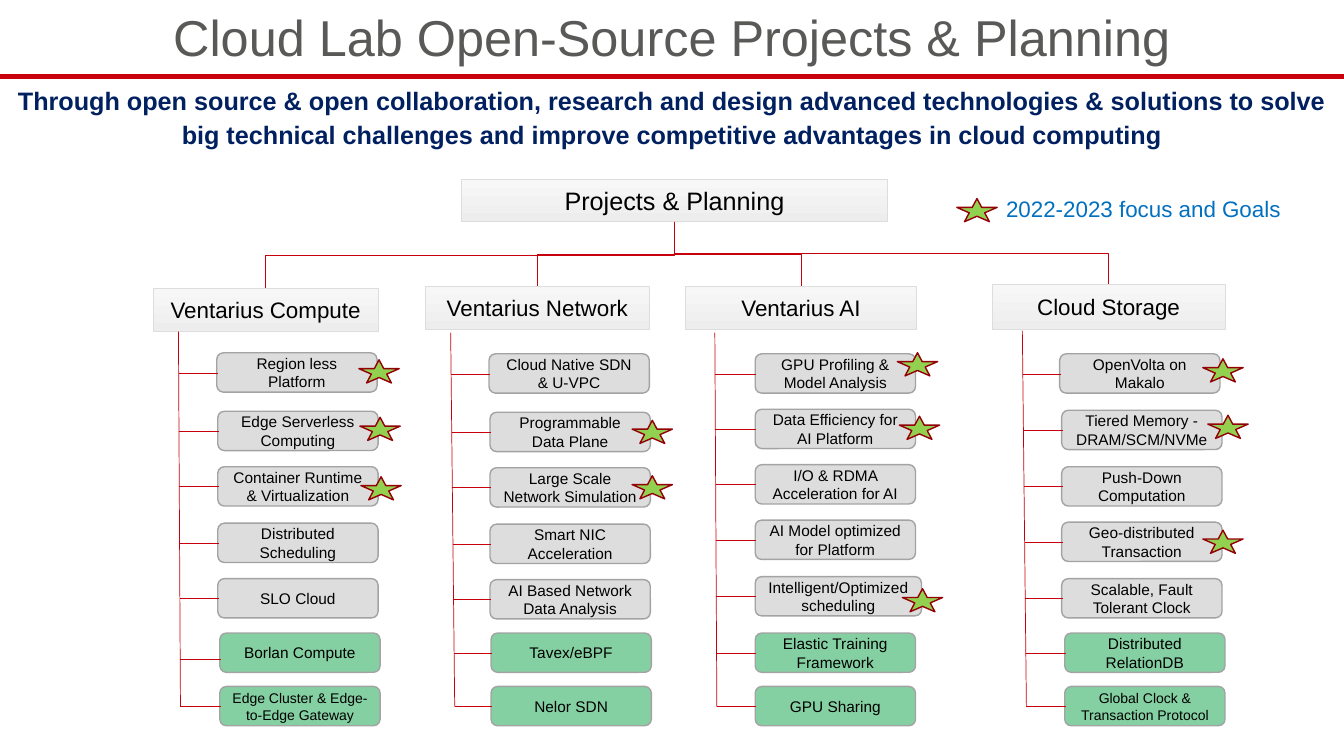
from dataclasses import dataclass

import pptx
import pptx.dml.color
import pptx.enum.dml
import pptx.enum.shapes
import pptx.enum.text
import pptx.oxml.ns
import pptx.util
from lxml import etree

Inches = pptx.util.Inches
Pt = pptx.util.Pt
SHAPE = pptx.enum.shapes.MSO_SHAPE
LINK = pptx.enum.shapes.MSO_CONNECTOR
ALIGN = pptx.enum.text.PP_ALIGN
ANCHOR = pptx.enum.text.MSO_ANCHOR

COLORS = {
    "title": "595957", "red": "C7000B", "navy": "002060", "blue": "0070C0",
    "black": "000000", "head_top": "F7F7F7", "head_bottom": "EDEDED",
    "gray": "DDDDDD", "box_line": "A3A3A3", "done": "84D0A2",
    "star": "92D050", "star_line": "930008",
}


@dataclass
class Item:
    text: str
    star: tuple = None
    size: float = 11
    width: float = 1.59
    rung: float = 0.2


@dataclass
class Column:
    name: str
    head: tuple      # left, top, width, height
    spine: tuple     # top x, top y, bottom x
    lefts: tuple     # first box, other planned boxes, finished boxes
    tops: tuple      # planned boxes
    items: list


class SlideBuilder:
    font = "Arial"

    def __init__(self, prs):
        self.slide = prs.slides.add_slide(prs.slide_layouts[1])
        self.shapes = self.slide.shapes

    def color(self, name):
        return pptx.dml.color.RGBColor.from_string(COLORS[name])

    def add_text(self, sp, text, size, color="black", bold=False,
                 align=ALIGN.CENTER, anchor=ANCHOR.MIDDLE, spacing=None, wrap=True):
        tf = sp.text_frame
        tf.auto_size = pptx.enum.text.MSO_AUTO_SIZE.NONE
        tf.word_wrap = wrap
        tf.vertical_anchor = anchor
        for i, line in enumerate(text.split("\n")):
            p = tf.paragraphs[0] if i == 0 else tf.add_paragraph()
            p.alignment = align
            p.space_before = Pt(0)
            if spacing:
                p.line_spacing = spacing
            r = p.add_run()
            r.text = line
            r.font.name = self.font
            r.font.size = Pt(size)
            r.font.bold = bold
            r.font.color.rgb = self.color(color)

    def placeholder(self, index, rect, text, size, color, spacing, bold=False):
        sp = self.slide.placeholders[index]
        sp.left, sp.top, sp.width, sp.height = map(Inches, rect)
        self.add_text(sp, text, size, color, bold, anchor=ANCHOR.BOTTOM, spacing=spacing)
        pPr = sp.text_frame.paragraphs[0]._p.get_or_add_pPr()
        pPr.set("marL", "0")
        pPr.set("indent", "0")
        etree.SubElement(pPr, pptx.oxml.ns.qn("a:buNone"))

    def shape(self, kind, rect, fill, line, weight):
        sp = self.shapes.add_shape(kind, *map(Inches, rect))
        sp.shadow.inherit = False
        if fill:
            sp.fill.solid()
            sp.fill.fore_color.rgb = self.color(fill)
        sp.line.color.rgb = self.color(line)
        sp.line.width = Pt(weight)
        return sp

    def heading(self, rect, text, size):
        sp = self.shape(SHAPE.RECTANGLE, rect, None, "gray", 0.5)
        sp.fill.gradient()
        sp.fill.gradient_angle = 270
        for stop, name in zip(sp.fill.gradient_stops, ("head_top", "head_bottom")):
            stop.color.rgb = self.color(name)
        self.add_text(sp, text, size)

    def box(self, rect, text, size, fill):
        sp = self.shape(SHAPE.ROUNDED_RECTANGLE, rect, fill, "box_line", 1)
        self.add_text(sp, text, size)

    def star(self, left, top):
        self.shape(SHAPE.STAR_5_POINT, (left, top, 0.4, 0.23), "star", "star_line", 1)

    def label(self, rect, text, size, color):
        sp = self.shapes.add_textbox(*map(Inches, rect))
        self.add_text(sp, text, size, color, align=ALIGN.LEFT, anchor=ANCHOR.TOP, wrap=False)

    def line(self, x1, y1, x2, y2, weight=0.5, kind=LINK.STRAIGHT):
        c = self.shapes.add_connector(kind, *map(Inches, (x1, y1, x2, y2)))
        c.line.color.rgb = self.color("red")
        c.line.width = Pt(weight)
        etree.SubElement(c._element.spPr, pptx.oxml.ns.qn("a:effectLst"))
        return c

    def elbow(self, x1, y1, x2, y2):
        """Vertical-first elbow: a horizontal-first one turned a quarter."""
        cx, cy = (x1 + x2) / 2, (y1 + y2) / 2
        side = 1 if x2 < x1 else -1
        dx, dy = side * (y2 - y1) / 2, abs(x2 - x1) / 2
        c = self.line(cx - dx, cy - dy, cx + dx, cy + dy, kind=LINK.ELBOW)
        c._element.spPr.find(pptx.oxml.ns.qn("a:xfrm")).set(
            "rot", str((90 if side > 0 else 270) * 60000))


COLUMNS = [
    Column("Ventarius Compute", (1.52, 2.86, 2.23, 0.43), (1.77, 3.29, 1.79),
           (2.15, 2.16, 2.18), (3.5, 4.08, 4.63, 5.19, 5.74), [
        Item("Region less Platform", (3.56, 3.57)),
        Item("Edge Serverless Computing", (3.57, 4.14)),
        Item("Container Runtime & Virtualization", (3.58, 4.73)),
        Item("Distributed Scheduling"),
        Item("SLO Cloud"),
        Item("Borlan Compute", rung=0.26),
        Item("Edge Cluster & Edge-to-Edge Gateway", size=10)]),
    Column("Ventarius Network", (4.22, 2.84, 2.22, 0.43), (4.47, 3.3, 4.51),
           (4.85, 4.86, 4.87), (3.51, 4.09, 4.64, 5.2, 5.75), [
        Item("Cloud Native SDN & U-VPC"),
        Item("Programmable Data Plane", (6.27, 4.17)),
        Item("Large Scale Network Simulation", (6.27, 4.72)),
        Item("Smart NIC\nAcceleration"),
        Item("AI Based Network Data Analysis"),
        Item("Tavex/eBPF"),
        Item("Nelor SDN")]),
    Column("Ventarius AI", (6.8, 2.84, 2.29, 0.43), (7.09, 3.3, 7.11),
           (7.49, 7.49, 7.49), (3.51, 4.06, 4.61, 5.16, 5.72), [
        Item("GPU Profiling & Model Analysis", (8.9, 3.5)),
        Item("Data Efficiency for AI Platform", (8.92, 4.13)),
        Item("I/O & RDMA Acceleration for AI"),
        Item("AI Model optimized for Platform"),
        Item("Intelligent/Optimized scheduling", (8.95, 5.84), width=1.65),
        Item("Elastic Training Framework"),
        Item("GPU Sharing")]),
    Column("Cloud Storage", (9.84, 2.82, 2.31, 0.45), (10.14, 3.28, 10.18),
           (10.51, 10.53, 10.56), (3.51, 4.07, 4.63, 5.18, 5.74), [
        Item("OpenVolta on Makalo", (11.93, 3.56)),
        Item("Tiered Memory - DRAM/SCM/NVMe", (11.98, 4.12)),
        Item("Push-Down Computation"),
        Item("Geo-distributed Transaction", (11.93, 5.26)),
        Item("Scalable, Fault Tolerant Clock"),
        Item("Distributed RelationDB"),
        Item("Global Clock & Transaction Protocol", size=10)]),
]
DONE_TOPS = (6.28, 6.81)
SPINE_END = 7.01
ROOT = (4.58, 1.78, 4.22, 0.42)


def main():
    prs = pptx.Presentation()
    prs.slide_width, prs.slide_height = Inches(13.33), Inches(7.5)
    s = SlideBuilder(prs)

    # Title, rule and mission statement
    s.placeholder(0, (0, 0, 13.33, 0.72), "Cloud Lab Open-Source Projects & Planning",
                  36, "title", 0.9)
    s.line(0, 0.76, 13.33, 0.76, 3.5)
    s.placeholder(1, (0, 0.9, 13.33, 0.63),
                  "Through open source & open collaboration, research and design advanced "
                  "technologies & solutions to solve big technical challenges and improve "
                  "competitive advantages in cloud computing", 18, "navy", 1.1, bold=True)

    # Root of the tree and legend
    s.heading(ROOT, "Projects & Planning", 18)
    s.star(9.49, 1.97)
    s.label((9.88, 1.89, 2.96, 0.37), "2022-2023 focus and Goals", 16, "blue")

    # Project columns
    for col in COLUMNS:
        left, top, width, _ = col.head
        s.heading(col.head, col.name, 16)
        s.elbow(ROOT[0] + ROOT[2] / 2, ROOT[1] + ROOT[3], left + width / 2, top)
        x1, y1, x2 = col.spine
        s.line(x1, y1, x2, SPINE_END)
        for i, (item, y) in enumerate(zip(col.items, col.tops + DONE_TOPS)):
            done = i >= len(col.tops)
            x = col.lefts[2 if done else min(i, 1)]
            s.box((x, y, item.width, 0.39), item.text, item.size, "done" if done else "gray")
            rung = y + item.rung
            start = x1 + (x2 - x1) * (rung - y1) / (SPINE_END - y1)
            s.line(start, rung, x + 0.01, rung)
            if item.star:
                s.star(*item.star)

    prs.save("out.pptx")


if __name__ == "__main__":
    main()
